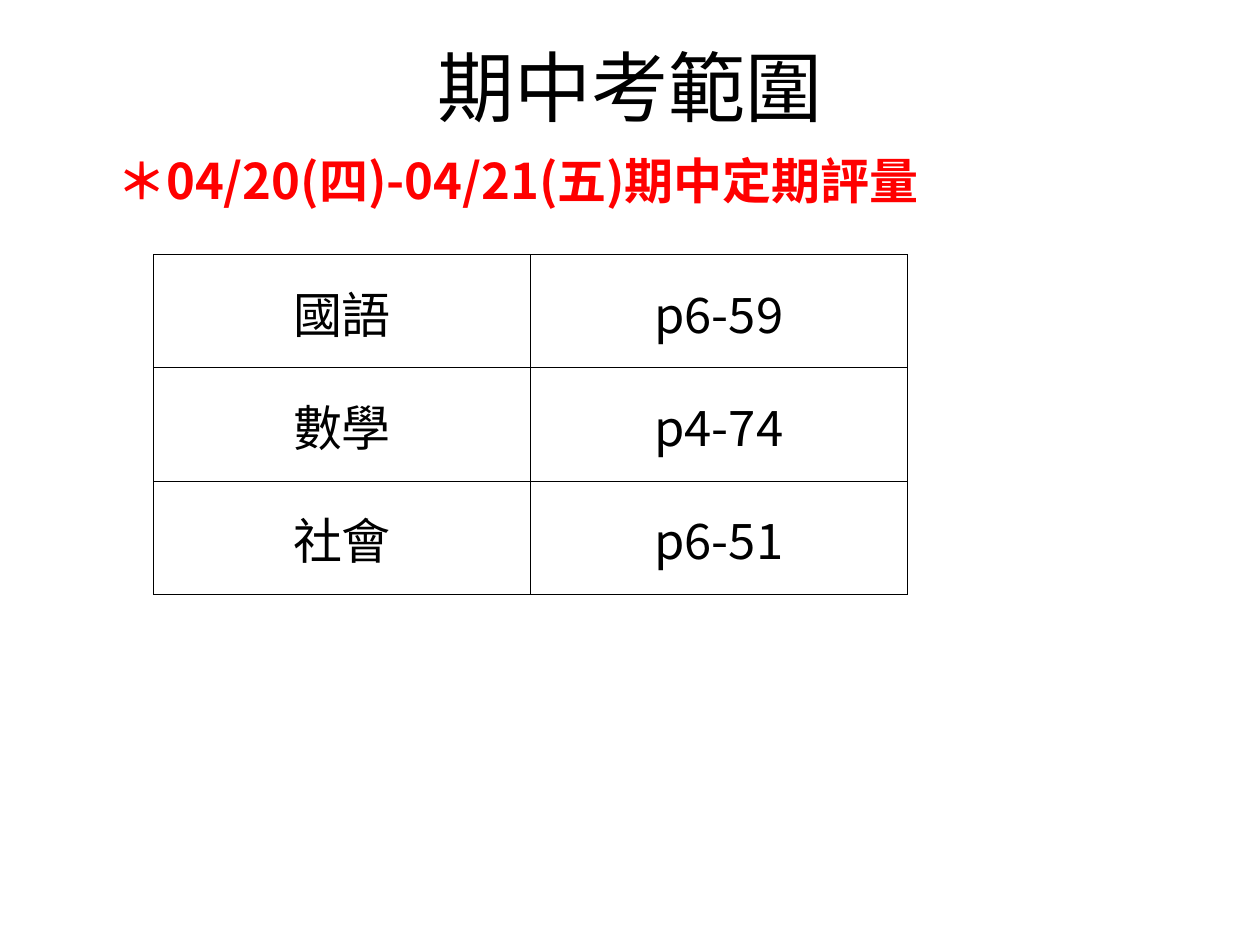
from dataclasses import dataclass
from lxml.etree import SubElement
from pptx import Presentation
from pptx.dml.color import RGBColor
from pptx.enum.text import MSO_ANCHOR, PP_ALIGN
from pptx.oxml import parse_xml
from pptx.oxml.ns import nsdecls, qn
from pptx.util import Pt


@dataclass(frozen=True)
class Theme:
    ink: str = "000000"
    alert: str = "FF0000"
    head: int = 44
    text: int = 28
    rule: float = 0.5
    title: str = "Noto Sans CJK JP"
    note: str = "Noto Sans CJK SC"
    cell: str = "Noto Sans CJK TC"


class Page:
    def __init__(self, slide, theme):
        self.slide = slide
        self.theme = theme

    def style(self, para, face, size, color, bold=False):
        for run in para.runs:
            font = run.font
            font.size = Pt(size)
            font.bold = bold
            font.color.rgb = RGBColor.from_string(color)
            font.name = face
            SubElement(font._element, qn("a:ea")).set("typeface", face)

    def label(self, box, text, face, size, color, bold=False,
              align=PP_ALIGN.LEFT, anchor=MSO_ANCHOR.TOP):
        frame = self.slide.shapes.add_textbox(*map(Pt, box)).text_frame
        frame.word_wrap = True
        frame.vertical_anchor = anchor
        frame.text = text
        para = frame.paragraphs[0]
        para.alignment = align
        para.line_spacing = 0.9
        self.style(para, face, size, color, bold)

    def border(self, cell):
        props = cell._tc.get_or_add_tcPr()
        for index, side in enumerate(("lnL", "lnR", "lnT", "lnB")):
            props.insert(index, parse_xml(
                f'<a:{side} {nsdecls("a")} w="{Pt(self.theme.rule)}">'
                f'<a:solidFill><a:srgbClr val="{self.theme.ink}"/></a:solidFill>'
                f'</a:{side}>'))

    def table(self, left, top, wide, high, rows):
        count = len(rows[0])
        grid = self.slide.shapes.add_table(
            len(rows), count, Pt(left), Pt(top),
            Pt(wide * count), Pt(high * len(rows))).table
        grid.first_row = False
        grid.horz_banding = False
        for row, texts in zip(grid.rows, rows):
            for cell, text in zip(row.cells, texts):
                cell.fill.background()
                cell.margin_left = cell.margin_right = cell.margin_top = Pt(0.7)
                cell.margin_bottom = Pt(0)
                cell.vertical_anchor = MSO_ANCHOR.MIDDLE
                cell.text_frame.text = text
                para = cell.text_frame.paragraphs[0]
                para.alignment = PP_ALIGN.CENTER
                self.style(para, self.theme.cell, self.theme.text, self.theme.ink)
                self.border(cell)


def main():
    deck = Presentation()
    deck.slide_width, deck.slide_height = Pt(720), Pt(540)
    theme = Theme()
    page = Page(deck.slides.add_slide(deck.slide_layouts[6]), theme)
    page.label((49.5, 0, 621, 104.5), "期中考範圍", theme.title, theme.head,
               theme.ink, align=PP_ALIGN.CENTER, anchor=MSO_ANCHOR.MIDDLE)
    page.label((60, 86.5, 629, 436), "＊04/20(四)-04/21(五)期中定期評量",
               theme.note, theme.text, theme.alert, bold=True)
    page.table(87.8, 145.4, 215.3, 64.8, [
        ("國語", "p6-59"),
        ("數學", "p4-74"),
        ("社會", "p6-51"),
    ])
    deck.save("out.pptx")


if __name__ == "__main__":
    main()
